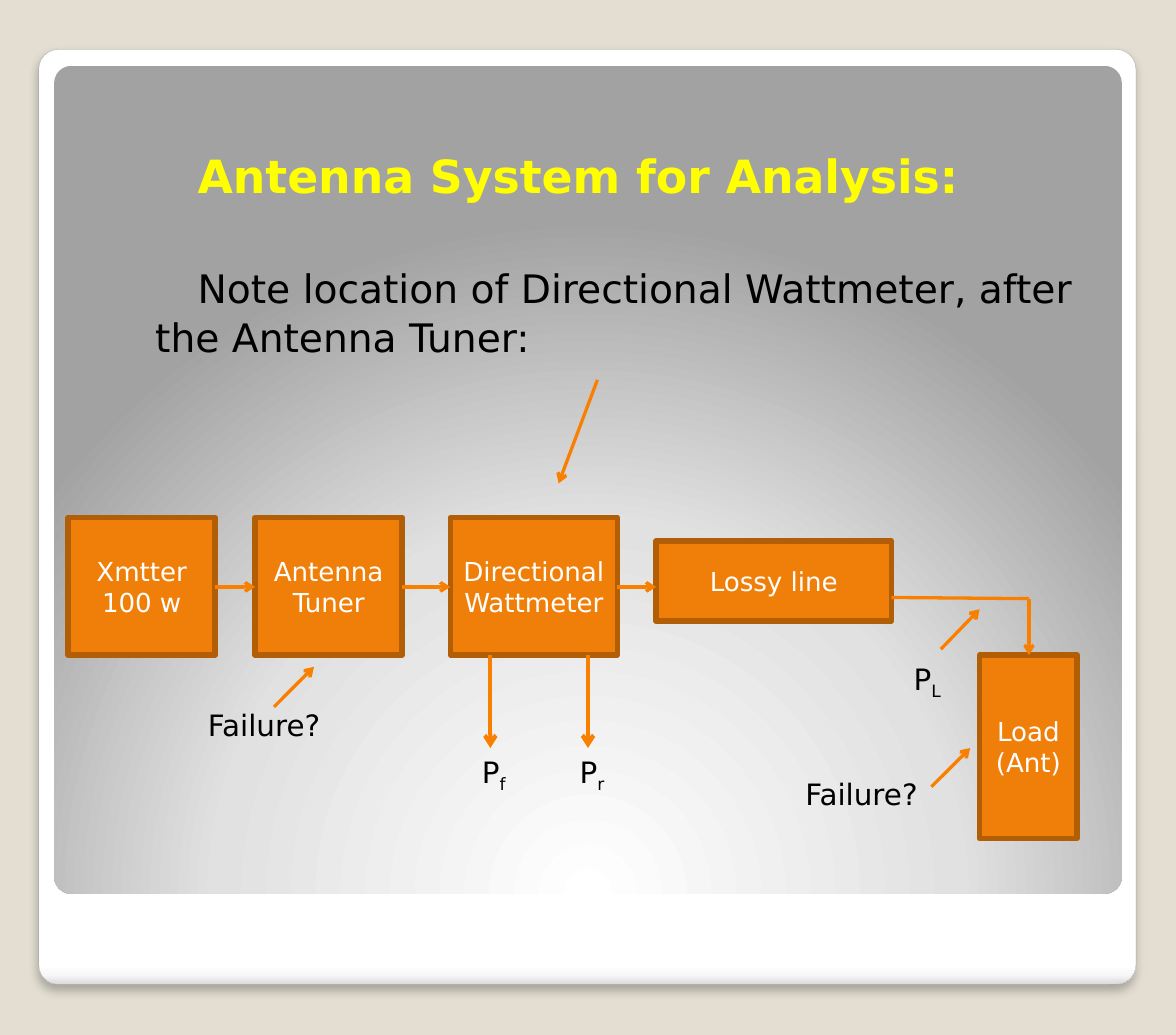
from lxml.etree import SubElement
from pptx import Presentation
from pptx.dml.color import RGBColor
from pptx.enum.shapes import MSO_CONNECTOR, MSO_SHAPE
from pptx.enum.text import MSO_ANCHOR, MSO_AUTO_SIZE, PP_ALIGN
from pptx.oxml import parse_xml
from pptx.oxml.ns import nsdecls, qn
from pptx.util import Inches, Pt

COLORS = {
    "backdrop": "E3DED1", "frame_edge": "A4A4A4", "heading": "FFFF00",
    "text": "000000", "block": "F07F09", "block_edge": "B25E07",
    "block_text": "FFFFFF", "arrow": "F97F00",
}
FONT = "DejaVu Sans"
FRAME_STOPS = [(0, "FFFFFF"), (98, "FFFFFF"), (99, "F7F7F7"), (100, "DADADA")]
PANEL_STOPS = [(0, "FFFFFF"), (55, "E1E1E1"), (100, "A2A2A2")]
LINEAR = '<a:lin ang="5400000" scaled="0"/>'
RADIAL = ('<a:path path="circle"><a:fillToRect l="50000" t="175000" '
          'r="50000" b="-75000"/></a:path>')
SHADOW = ('<a:effectLst {}><a:outerShdw blurRad="76200" dist="50800" dir="5400000" '
          'rotWithShape="0"><a:srgbClr val="000000"><a:alpha val="25000"/></a:srgbClr>'
          '</a:outerShdw></a:effectLst>')

ROW_TOP, ROW_HEIGHT, ROW_AXIS = 4.4, 1.17, 4.99
BLOCKS = [
    (["Xmtter", "100 w"], 0.58, ROW_TOP, 1.25, ROW_HEIGHT),
    (["Antenna", "Tuner"], 2.17, ROW_TOP, 1.25, ROW_HEIGHT),
    (["Directional", "Wattmeter"], 3.83, ROW_TOP, 1.42, ROW_HEIGHT),
    (["Lossy line"], 5.58, 4.6, 2, 0.68),
    (["Load (Ant)"], 8.33, 5.57, 0.83, 1.56),
]
CHAIN = [(1.83, 2.17), (3.42, 3.83), (5.25, 5.58)]
METER_TAPS = [4.17, 5]
POINTERS = [
    (5.08, 3.23, 4.75, 4.11),
    (8, 5.52, 8.33, 5.18),
    (2.33, 6.01, 2.67, 5.67),
    (7.92, 6.69, 8.25, 6.36),
]
LABELS = [
    ("P", "f", 4, 6.36, 0.41), ("P", "r", 4.83, 6.36, 0.43),
    ("P", "L", 7.67, 5.57, 0.45),
    ("Failure?", "", 1.67, 5.96, 1.18), ("Failure?", "", 6.75, 6.55, 1.18),
]


def rgb(name):
    """Return the named colour."""
    return RGBColor.from_string(COLORS[name])


def apply_format(target, values):
    """Set each format value on the target."""
    for attribute, value in values.items():
        setattr(target, attribute, value)


def add_run(paragraph, text, size, color, bold=False):
    """Add a formatted run and return it."""
    run = paragraph.add_run()
    run.text = text
    apply_format(run.font, {"name": FONT, "size": Pt(size), "bold": bold})
    run.font.color.rgb = rgb(color)
    return run


def add_panel(slide, box, stops, direction):
    """Add a rounded panel with a gradient fill."""
    panel = slide.shapes.add_shape(MSO_SHAPE.ROUNDED_RECTANGLE, *map(Inches, box))
    panel.adjustments[0] = 0.021
    panel.shadow.inherit = False
    panel.line.fill.background()
    colors = "".join(f'<a:gs pos="{position * 1000}"><a:srgbClr val="{color}"/></a:gs>'
                     for position, color in stops)
    gradient = parse_xml(f'<a:gradFill {nsdecls("a")} rotWithShape="1">'
                         f'<a:gsLst>{colors}</a:gsLst>{direction}</a:gradFill>')
    panel._element.spPr.find(qn("a:prstGeom")).addnext(gradient)
    return panel


def add_frame(slide):
    """Add the white frame and the grey panel on it."""
    frame = add_panel(slide, (0.33, 0.42, 9.33, 7.95), FRAME_STOPS, LINEAR)
    frame.line.color.rgb = rgb("frame_edge")
    frame.line.width = Pt(0.16)
    properties = frame._element.spPr
    properties.replace(properties.find(qn("a:effectLst")),
                       parse_xml(SHADOW.format(nsdecls("a"))))
    add_panel(slide, (0.46, 0.56, 9.08, 7.04), PANEL_STOPS, RADIAL)


def indent(paragraph, left, first):
    """Set the left margin and first-line indent of a paragraph."""
    properties = paragraph._p.get_or_add_pPr()
    properties.set("marL", str(Inches(left)))
    properties.set("indent", str(Inches(first)))


def fill_title(slide):
    """Place the heading and its note in the title placeholder."""
    title = slide.shapes.title
    slide.shapes._spTree.append(title._element)
    apply_format(title, {"left": Inches(0.58), "top": Inches(1.76),
                         "width": Inches(8.95), "height": Inches(1.35)})
    frame = title.text_frame
    apply_format(frame, {"vertical_anchor": MSO_ANCHOR.BOTTOM, "word_wrap": True,
                         "auto_size": MSO_AUTO_SIZE.NONE})
    heading, note = frame.paragraphs[0], frame.add_paragraph()
    heading.alignment = PP_ALIGN.LEFT
    indent(heading, 1, 0)
    add_run(heading, "Antenna System for Analysis:", 28, "heading", True)
    apply_format(note, {"alignment": PP_ALIGN.LEFT, "space_before": Pt(36),
                        "line_spacing": Pt(30)})
    indent(note, 0.64, 0.36)
    add_run(note, "Note location of Directional Wattmeter, after the Antenna Tuner:",
            24, "text")


def add_block(slide, lines, *box):
    """Add a block of the antenna system."""
    block = slide.shapes.add_shape(MSO_SHAPE.RECTANGLE, *map(Inches, box))
    block.shadow.inherit = False
    block.fill.solid()
    block.fill.fore_color.rgb = rgb("block")
    block.line.color.rgb = rgb("block_edge")
    block.line.width = Pt(3.35)
    frame = block.text_frame
    apply_format(frame, {"vertical_anchor": MSO_ANCHOR.MIDDLE, "word_wrap": True,
                         "margin_left": Inches(0.05), "margin_right": Inches(0.05)})
    for index, line in enumerate(lines):
        paragraph = frame.add_paragraph() if index else frame.paragraphs[0]
        paragraph.alignment = PP_ALIGN.CENTER
        add_run(paragraph, line, 16, "block_text")


def add_signal(slide, *ends, width=2, arrow=True):
    """Add a signal line, with an arrowhead unless told otherwise."""
    signal = slide.shapes.add_connector(MSO_CONNECTOR.STRAIGHT, *map(Inches, ends))
    signal.line.color.rgb = rgb("arrow")
    signal.line.width = Pt(width)
    if arrow:
        SubElement(signal.line._get_or_add_ln(), qn("a:tailEnd"), type="arrow")
    SubElement(signal._element.spPr, qn("a:effectLst"))


def add_label(slide, text, subscript, left, top, width):
    """Add a label with an optional subscript."""
    label = slide.shapes.add_textbox(*map(Inches, (left, top, width, 0.4)))
    apply_format(label.text_frame, {"word_wrap": False,
                                    "auto_size": MSO_AUTO_SIZE.SHAPE_TO_FIT_TEXT})
    paragraph = label.text_frame.paragraphs[0]
    add_run(paragraph, text, 18, "text")
    if subscript:
        run = add_run(paragraph, subscript, 18, "text")
        run.font._element.set("baseline", "-25000")


def main():
    """Build the antenna system slide."""
    presentation = Presentation()
    apply_format(presentation, {"slide_width": Inches(10), "slide_height": Inches(8.8)})
    slide = presentation.slides.add_slide(presentation.slide_layouts[5])
    slide.background.fill.solid()
    slide.background.fill.fore_color.rgb = rgb("backdrop")
    add_frame(slide)
    fill_title(slide)
    for block in BLOCKS:
        add_block(slide, *block)
    for start, end in CHAIN:
        add_signal(slide, start, ROW_AXIS, end, ROW_AXIS)
    for tap in METER_TAPS:
        add_signal(slide, tap, 5.57, tap, 6.36, width=2.5)
    add_signal(slide, 8.75, 5.09, 7.58, 5.08, arrow=False)
    add_signal(slide, 8.75, 5.09, 8.75, 5.57)
    for pointer in POINTERS:
        add_signal(slide, *pointer)
    for label in LABELS:
        add_label(slide, *label)
    presentation.save("out.pptx")


if __name__ == "__main__":
    main()
